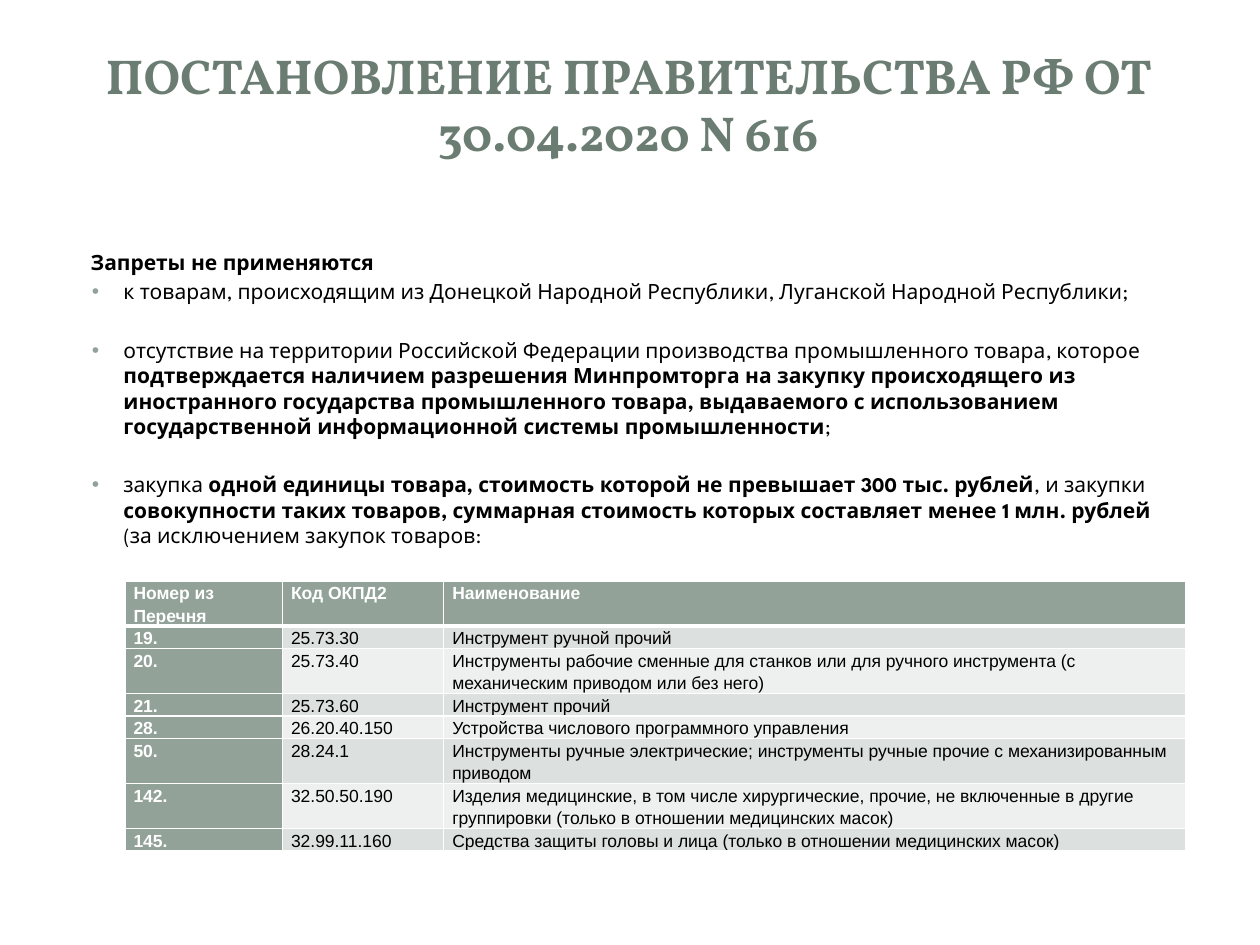
from lxml.etree import SubElement
from pptx import Presentation
from pptx.dml.color import RGBColor
from pptx.enum.shapes import MSO_SHAPE
from pptx.enum.text import MSO_ANCHOR, MSO_AUTO_SIZE, PP_ALIGN
from pptx.oxml.ns import qn
from pptx.util import Inches, Pt

# Content: text between asterisks is bold
TITLE = "ПОСТАНОВЛЕНИЕ ПРАВИТЕЛЬСТВА РФ ОТ 30.04.2020 N 616"
LEAD = "*Запреты не применяются*"
BULLETS = [
    "к товарам, происходящим из Донецкой Народной Республики, Луганской Народной Республики;",
    "отсутствие на территории Российской Федерации производства промышленного товара, которое "
    "*подтверждается наличием разрешения Минпромторга на закупку происходящего из иностранного "
    "государства промышленного товара, выдаваемого с использованием государственной "
    "информационной системы промышленности*;",
    "закупка *одной единицы товара, стоимость которой не превышает 300 тыс. рублей*, и закупки "
    "*совокупности таких товаров, суммарная стоимость которых составляет менее 1 млн. рублей *"
    "(за исключением закупок товаров:",
]
# Number, code, name, lines of text in the row
ROWS = [
    ("Номер из Перечня", "Код ОКПД2", "Наименование", 2),
    ("19.", "25.73.30", "Инструмент ручной прочий", 1),
    ("20.", "25.73.40", "Инструменты рабочие сменные для станков или для ручного инструмента "
     "(с механическим приводом или без него)", 2),
    ("21.", "25.73.60", "Инструмент прочий", 1),
    ("28.", "26.20.40.150", "Устройства числового программного управления", 1),
    ("50.", "28.24.1", "Инструменты ручные электрические; инструменты ручные прочие "
     "с механизированным приводом", 2),
    ("142.", "32.50.50.190", "Изделия медицинские, в том числе хирургические, прочие, "
     "не включенные в другие группировки (только в отношении медицинских масок)", 2),
    ("145.", "32.99.11.160", "Средства защиты головы и лица "
     "(только в отношении медицинских масок)", 1),
]
COLORS = {"title": "6B7D72", "accent": "93A299", "text": "000000", "white": "FFFFFF",
          "odd": "DCE0DE", "even": "EEF0EF"}
# Background panels: shape, box, opacity in percent
PANELS = [
    (MSO_SHAPE.ROUNDED_RECTANGLE, (0.1, 0.11, 9.8, 7.29), 100),
    (MSO_SHAPE.RECTANGLE, (0.3, 0.3, 9.4, 1.45), 83),
    (MSO_SHAPE.RECTANGLE, (0.41, 0.41, 9.17, 1.22), 100),
]
COL_WIDTHS = (1.25, 1.28, 5.89)
ROW_LINE = 0.178
BODY_LINE, BODY_GAP = 14.5, 2.2


def rgb(name):
    return RGBColor.from_string(COLORS[name])


def write(p, text, font, size, color="text", bold=False, spacing=None, before=0, align=None):
    p.line_spacing, p.space_before, p.alignment = spacing, Pt(before), align
    for i, part in enumerate(text.split("*")):
        if part:
            r = p.add_run()
            r.text = part
            r.font.name, r.font.size = font, Pt(size)
            r.font.bold = bold or i % 2 == 1
            r.font.color.rgb = rgb(color)


def set_bullet(p, left, hanging=0, char=None):
    pPr = p._p.get_or_add_pPr()
    pPr.set("marL", str(Inches(left)))
    pPr.set("indent", str(-Inches(hanging)))
    if char:
        SubElement(SubElement(pPr, qn("a:buClr")), qn("a:srgbClr"), val=COLORS["accent"])
        SubElement(pPr, qn("a:buFont"), typeface="Arial")
        SubElement(pPr, qn("a:buChar"), char=char)
    else:
        SubElement(pPr, qn("a:buNone"))


def set_borders(cell, bottom):
    tcPr = cell._tc.get_or_add_tcPr()
    for i, (side, width) in enumerate((("L", 1), ("R", 1), ("T", 1), ("B", bottom))):
        ln = tcPr.makeelement(qn("a:ln" + side), {"w": str(Pt(width))})
        SubElement(SubElement(ln, qn("a:solidFill")), qn("a:srgbClr"), val=COLORS["white"])
        tcPr.insert(i, ln)


def place(sp, left, top, width, height):
    sp.left, sp.top, sp.width, sp.height = map(Inches, (left, top, width, height))
    tf = sp.text_frame
    tf.word_wrap, tf.auto_size = True, MSO_AUTO_SIZE.NONE
    return tf


prs = Presentation()
prs.slide_width, prs.slide_height = Inches(10), Inches(7.5)
s = prs.slides.add_slide(prs.slide_layouts[1])
title, body = s.placeholders

# Panels, moved behind the placeholders
for i, (kind, box, opacity) in enumerate(PANELS):
    sp = s.shapes.add_shape(kind, *map(Inches, box))
    sp.shadow.inherit = False
    sp.fill.solid()
    sp.fill.fore_color.rgb = rgb("white")
    sp.line.fill.background()
    if kind == MSO_SHAPE.ROUNDED_RECTANGLE:
        sp.adjustments[0] = 0.017
    if opacity < 100:
        clr = sp._element.spPr.find(qn("a:solidFill"))[0]
        SubElement(clr, qn("a:alpha"), val=str(opacity * 1000))
    s.shapes._spTree.insert(2 + i, sp._element)

# Title, raised above the middle of its box
tf = place(title, 0.47, 0.45, 9.03, 1.26)
tf.vertical_anchor, tf.margin_bottom = MSO_ANCHOR.MIDDLE, Inches(0.53)
write(tf.paragraphs[0], TITLE, "Vollkorn", 28, "title", bold=True, spacing=0.97,
      align=PP_ALIGN.CENTER)

# Lead line and bullets
tf = place(body, 0.5, 1.7, 8.99, 5.43)
tf.vertical_anchor, tf.margin_top = MSO_ANCHOR.TOP, Inches(0.28)
p = tf.paragraphs[0]
write(p, LEAD, "League Spartan", 12, spacing=Pt(BODY_LINE))
set_bullet(p, 0.12)
for i, text in enumerate(BULLETS):
    p = tf.add_paragraph()
    before = BODY_LINE + 2 * BODY_GAP if i else BODY_GAP
    write(p, text, "League Spartan", 12, spacing=Pt(BODY_LINE), before=before)
    set_bullet(p, 0.38, 0.25, "•")

# Table of goods
heights = [row[-1] * ROW_LINE for row in ROWS]
table = s.shapes.add_table(len(ROWS), len(COL_WIDTHS), Inches(0.99), Inches(4.61),
                           Inches(sum(COL_WIDTHS)), Inches(sum(heights))).table
for col, width in zip(table.columns, COL_WIDTHS):
    col.width = Inches(width)
for r, row in enumerate(ROWS):
    table.rows[r].height = Inches(heights[r])
    for c, text in enumerate(row[:-1]):
        cell = table.cell(r, c)
        head = r == 0 or c == 0
        cell.margin_left = cell.margin_right = Inches(0.07)
        cell.margin_top = cell.margin_bottom = 0
        cell.fill.solid()
        cell.fill.fore_color.rgb = rgb("accent" if head else "odd" if r % 2 else "even")
        set_borders(cell, 1 if r else 3)
        write(cell.text_frame.paragraphs[0], text, "Arial", 10, "white" if head else "text",
              bold=head, spacing=1.15)

prs.save("out.pptx")
